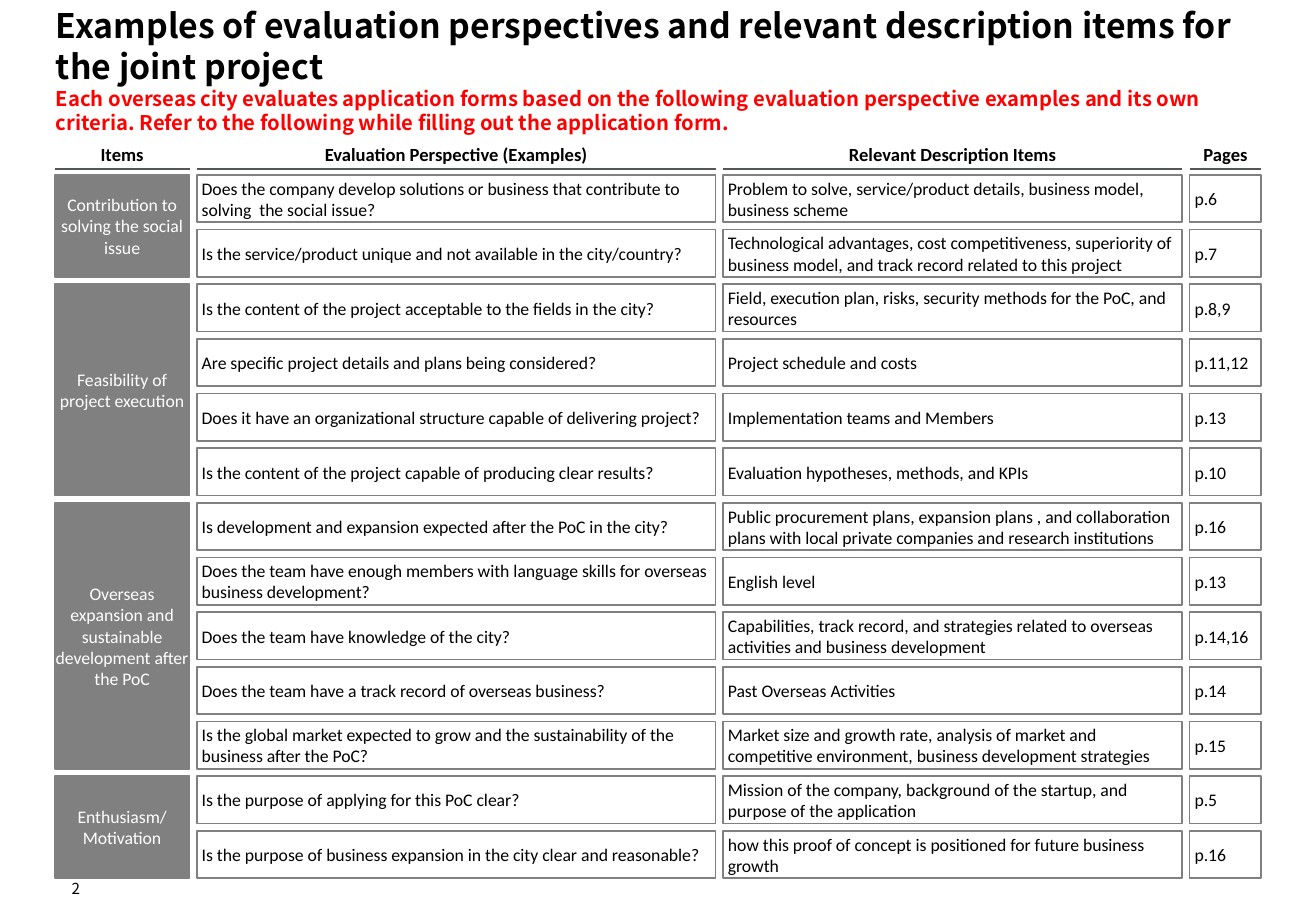
from itertools import accumulate

from pptx import Presentation
from pptx.dml.color import RGBColor
from pptx.enum.shapes import MSO_CONNECTOR as Link, MSO_SHAPE as Kind
from pptx.enum.text import MSO_ANCHOR as Anchor, MSO_AUTO_SIZE as Fit, PP_ALIGN as Align
from pptx.oxml.ns import qn
from pptx.util import Inches, Pt

TITLE = "Examples of evaluation perspectives and relevant description items for the joint project"
LEAD = ("Each overseas city evaluates application forms based on the following evaluation "
        "perspective examples and its own criteria. Refer to the following while filling out "
        "the application form.")
PAGE = "2"
HEADS = ["Items", "Evaluation Perspective (Examples)", "Relevant Description Items", "Pages"]
GROUPS = [
    ("Contribution to solving the social issue", [
        ("Does the company develop solutions or business that contribute to solving  the social issue?",
         "Problem to solve, service/product details, business model, business scheme", "p.6"),
        ("Is the service/product unique and not available in the city/country?",
         "Technological advantages, cost competitiveness, superiority of business model, "
         "and track record related to this project", "p.7"),
    ]),
    ("Feasibility of project execution", [
        ("Is the content of the project acceptable to the fields in the city?",
         "Field, execution plan, risks, security methods for the PoC, and resources", "p.8,9"),
        ("Are specific project details and plans being considered?",
         "Project schedule and costs", "p.11,12"),
        ("Does it have an organizational structure capable of delivering project?",
         "Implementation teams and Members", "p.13"),
        ("Is the content of the project capable of producing clear results?",
         "Evaluation hypotheses, methods, and KPIs", "p.10"),
    ]),
    ("Overseas expansion and sustainable development after the PoC", [
        ("Is development and expansion expected after the PoC in the city?",
         "Public procurement plans, expansion plans , and collaboration plans with local "
         "private companies and research institutions", "p.16"),
        ("Does the team have enough members with language skills for overseas business development?",
         "English level", "p.13"),
        ("Does the team have knowledge of the city?",
         "Capabilities, track record, and strategies related to overseas activities "
         "and business development", "p.14,16"),
        ("Does the team have a track record of overseas business?",
         "Past Overseas Activities", "p.14"),
        ("Is the global market expected to grow and the sustainability of the business after the PoC?",
         "Market size and growth rate, analysis of market and competitive environment, "
         "business development strategies", "p.15"),
    ]),
    ("Enthusiasm/ Motivation", [
        ("Is the purpose of applying for this PoC clear?",
         "Mission of the company, background of the startup, and purpose of the application", "p.5"),
        ("Is the purpose of business expansion in the city clear and reasonable?",
         "how this proof of concept is positioned for future business growth", "p.16"),
    ]),
]

BLACK = RGBColor(0, 0, 0)
WHITE = RGBColor(255, 255, 255)
RED = RGBColor(255, 0, 0)
GRAY = RGBColor(0x80, 0x80, 0x80)
RULE = RGBColor(0x53, 0x56, 0x5A)
SANS, BODY = "Noto Sans CJK JP", "Calibri"

# Grid in inches
WIDE, HIGH = 10.83, 7.5
LEFT, TOP, GAP = 0.45, 1.44, 0.06
COLS = [1.11, 4.27, 3.78, 0.59]
ROW = 0.39
HEAD_TOP, HEAD = 1.14, 0.25
PAD = 0.04
EDGES = list(accumulate([w + GAP for w in COLS[:-1]], initial=LEFT))


def put(shape, text, size, font=BODY, color=BLACK, bold=False,
        align=Align.LEFT, anchor=Anchor.MIDDLE, pad=PAD, wrap=True):
    frame = shape.text_frame
    frame.margin_left = frame.margin_right = Inches(pad)
    frame.margin_top = frame.margin_bottom = Inches(pad)
    frame.word_wrap, frame.vertical_anchor = wrap, anchor
    para = frame.paragraphs[0]
    para.text, para.alignment = text, align
    face = para.font
    face.name, face.size, face.bold = font, Pt(size), bold
    face.color.rgb = color


def cell(slide, col, row, span=1):
    """Add an outlined box that covers span rows of one column."""
    pitch = ROW + GAP
    box = slide.shapes.add_shape(
        Kind.RECTANGLE, Inches(EDGES[col]), Inches(TOP + row * pitch),
        Inches(COLS[col]), Inches(span * pitch - GAP))
    box.shadow.inherit = False
    box.fill.background()
    box.line.color.rgb, box.line.width = GRAY, Pt(1)
    return box


def head(slide, col, text):
    x, w = Inches(EDGES[col]), Inches(COLS[col])
    y = Inches(HEAD_TOP + HEAD)
    box = slide.shapes.add_textbox(x, Inches(HEAD_TOP), w, Inches(HEAD))
    put(box, text, 11, bold=True, align=Align.CENTER, wrap=False)
    rule = slide.shapes.add_connector(Link.STRAIGHT, x, y, x + w, y)
    rule.line.color.rgb, rule.line.width = RULE, Pt(1)
    rule._element.spPr.append(rule._element.makeelement(qn("a:effectLst"), {}))


def title(slide):
    box = slide.shapes.title
    box.left, box.top, box.width, box.height = map(Inches, (0.46, 0.2, 9.92, 0.91))
    put(box, "", 20, SANS, bold=True, anchor=Anchor.BOTTOM, pad=0)
    box.text_frame.auto_size = Fit.NONE
    para = box.text_frame.paragraphs[0]
    para.line_spacing = 1.0
    para.add_run().text = TITLE
    para.add_line_break()
    para.add_run().text = LEAD
    for run, size, color in zip(para.runs, (20, 12), (BLACK, RED)):
        run.font.size, run.font.color.rgb = Pt(size), color


def main():
    deck = Presentation()
    deck.slide_width, deck.slide_height = Inches(WIDE), Inches(HIGH)
    slide = deck.slides.add_slide(deck.slide_layouts[5])
    title(slide)
    for col, text in enumerate(HEADS):
        head(slide, col, text)

    row = 0
    for item, lines in GROUPS:
        box = cell(slide, 0, row, len(lines))
        box.fill.solid()
        box.fill.fore_color.rgb = GRAY
        put(box, item, 10.5, color=WHITE, align=Align.CENTER, pad=0)
        for line in lines:
            for col, text in enumerate(line, 1):
                put(cell(slide, col, row), text, 10.5)
            row += 1

    num = slide.shapes.add_textbox(*map(Inches, (0.46, 7.2, 0.2, 0.19)))
    put(num, PAGE, 9, SANS, align=Align.RIGHT, anchor=Anchor.BOTTOM, pad=0, wrap=False)
    deck.save("out.pptx")


if __name__ == "__main__":
    main()
